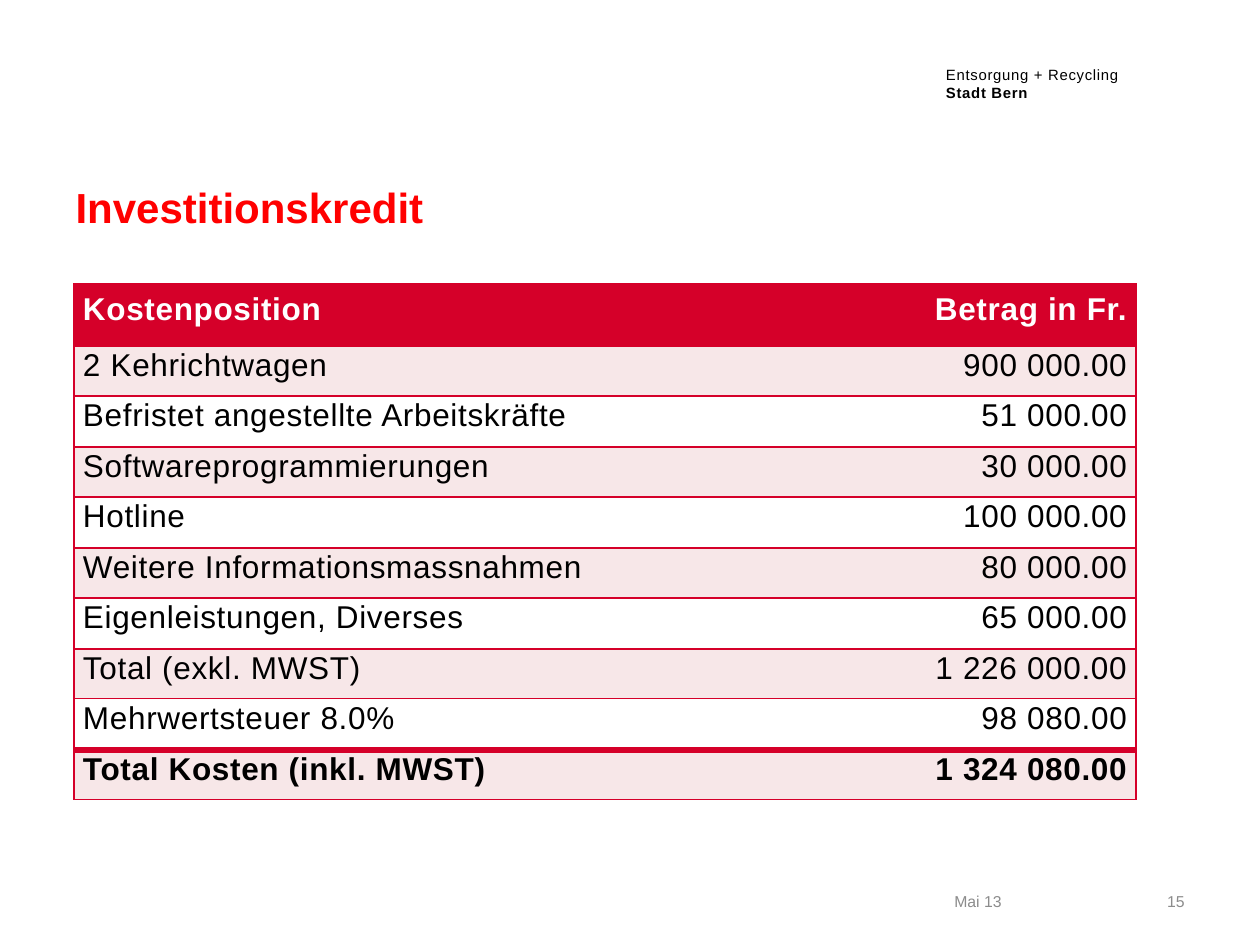
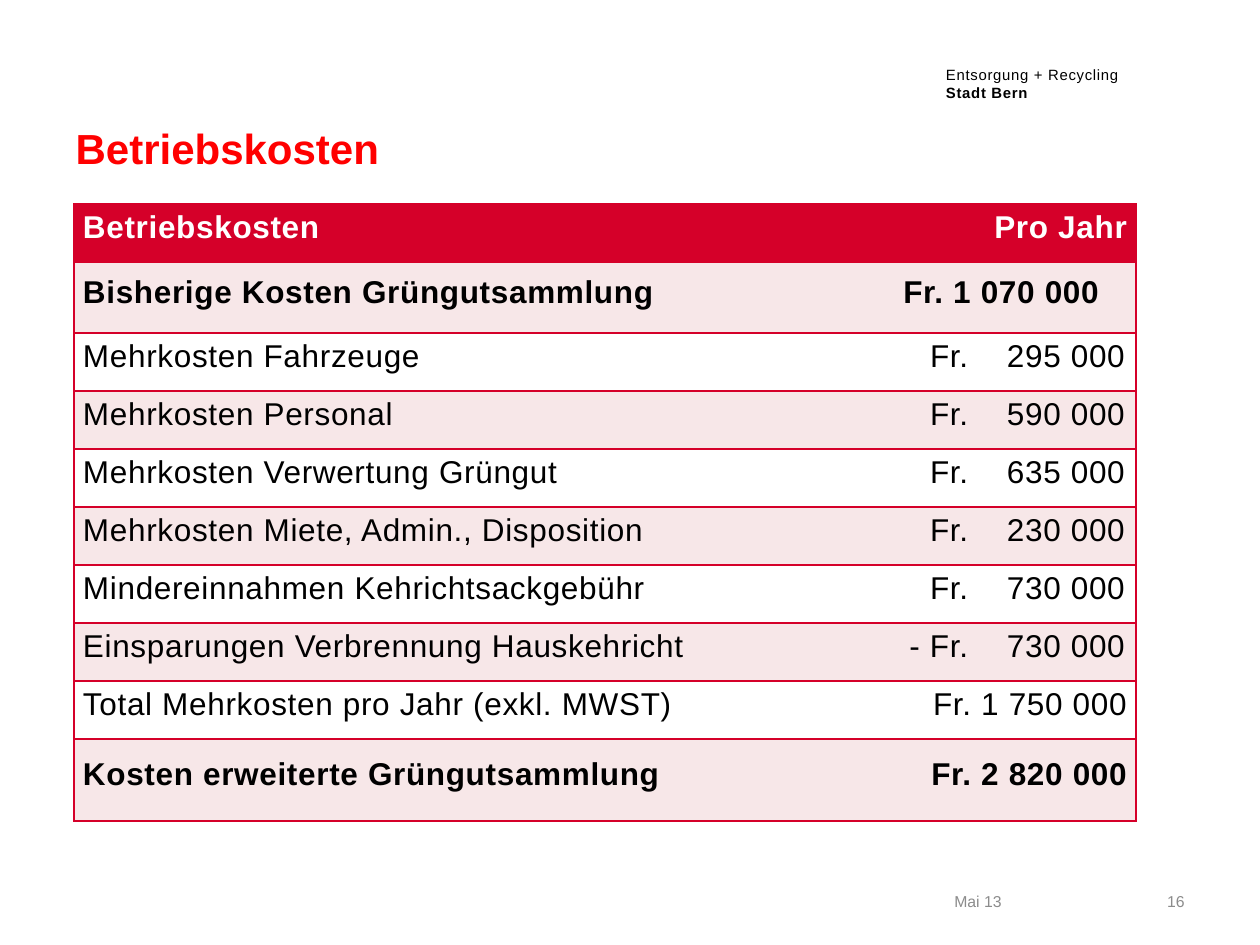
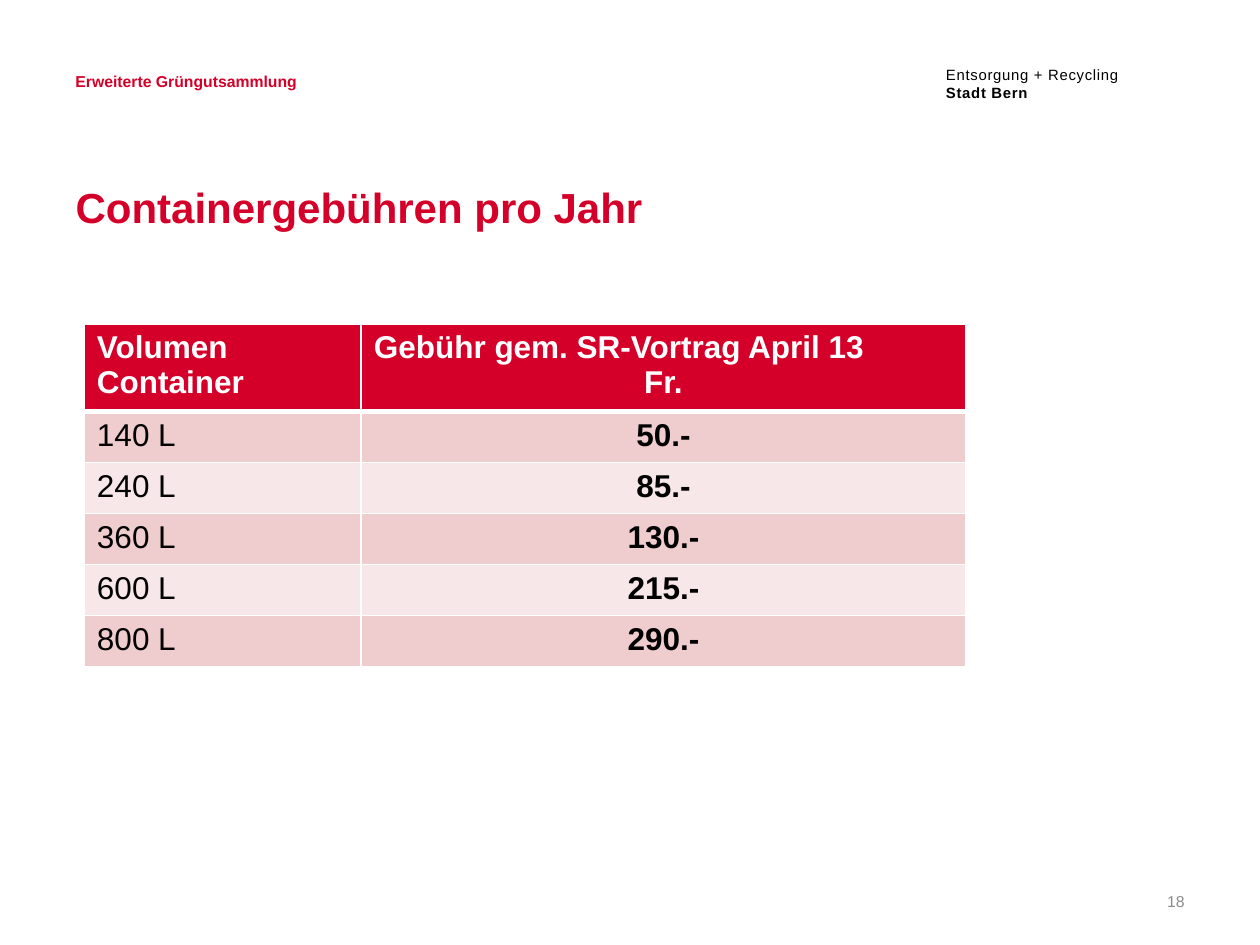
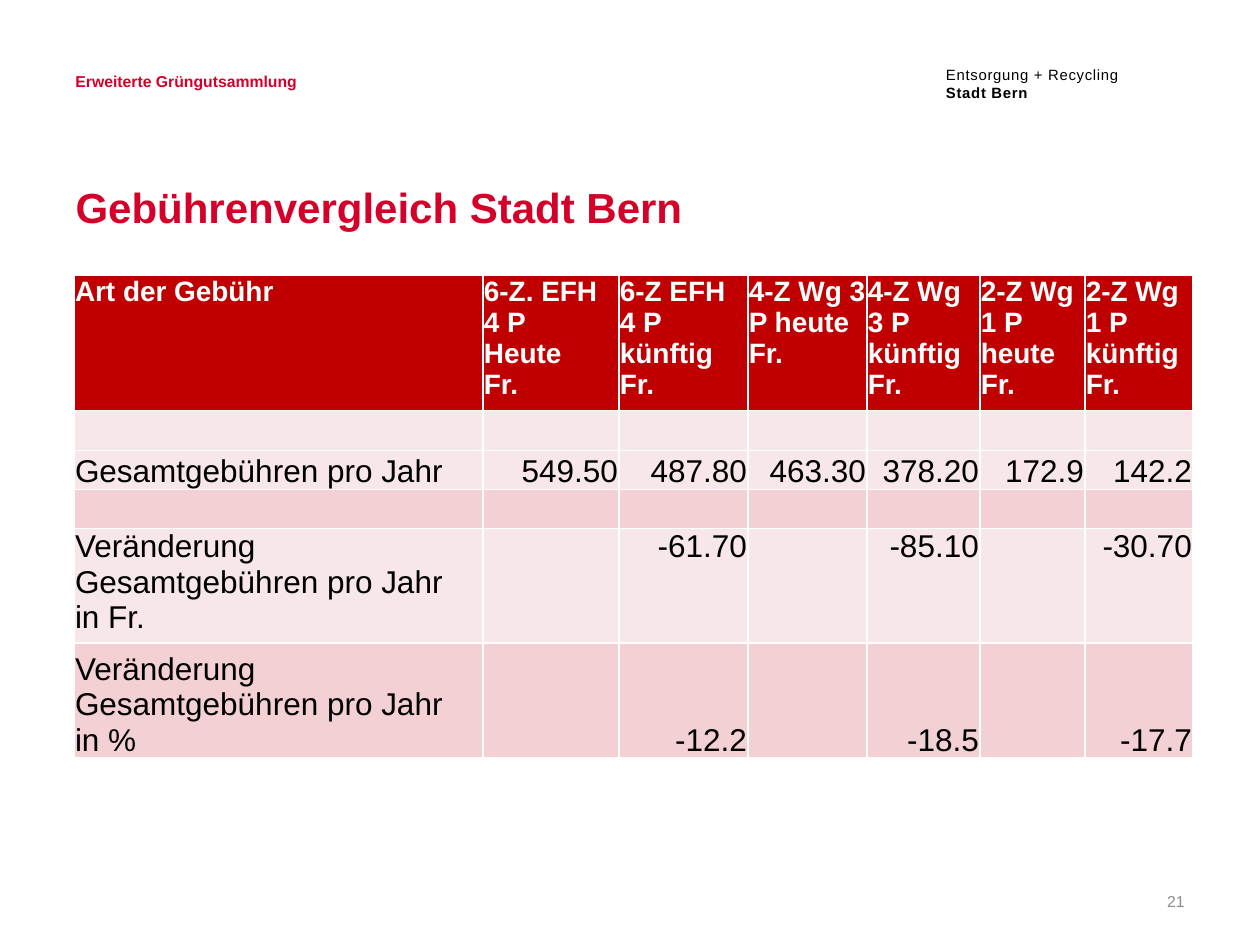
from itertools import cycle

from lxml.etree import SubElement
from pptx import Presentation
from pptx.dml.color import RGBColor
from pptx.enum.text import MSO_ANCHOR as Anchor, MSO_AUTO_SIZE as AutoSize, PP_ALIGN as Align
from pptx.oxml.ns import qn
from pptx.util import Pt

COLORS = {
    "black": "000000", "white": "FFFFFF", "gray": "8C8C8C", "red": "FF0000",
    "crimson": "D50029", "dark_red": "C00000",
    "blush": "F7E7E8", "rose": "EFCCCD", "pink": "F2D0D3",
}
FONT = "Arial"
PX = 914400 / 126
PAGE_SIZE = (1260, 945)
TABS = (250, 406)
HEADER = "Entsorgung + Recycling\nStadt Bern"
TAGLINE = "Erweiterte Grüngutsammlung"
DATE = "Mai 13"

LEDGER = {
    "bands": ["blush", "white"], "head": "crimson", "line": "crimson",
    "aligns": [Align.LEFT, Align.RIGHT], "anchors": [Anchor.MIDDLE],
    "insets": (9, 0, 9, 0), "spacing": 0.4, "line_height": 14, "inner_width": 0,
}
GRID = {"line": "white", "inner_width": 1, "bold_rows": {0}}

SLIDES = [
    {
        "title": "Investitionskredit", "title_color": "red", "title_top": 175,
        "number": "15", "date": True,
        "table": LEDGER | {
            "left": 74, "top": 284, "widths": [594, 468],
            "heights": [62] + [50, 51] * 4 + [50],
            "bold_rows": {0, 9}, "rules": {9: 4},
            "rows": [
                ("Kostenposition", "Betrag in Fr."),
                ("2 Kehrichtwagen", "900 000.00"),
                ("Befristet angestellte Arbeitskräfte", "51 000.00"),
                ("Softwareprogrammierungen", "30 000.00"),
                ("Hotline", "100 000.00"),
                ("Weitere Informationsmassnahmen", "80 000.00"),
                ("Eigenleistungen, Diverses", "65 000.00"),
                ("Total (exkl. MWST)", "1 226 000.00"),
                ("Mehrwertsteuer 8.0%", "98 080.00"),
                ("Total Kosten (inkl. MWST)", "1 324 080.00"),
            ],
        },
    },
    {
        "title": "Betriebskosten", "title_color": "red", "title_top": 116,
        "number": "16", "date": True,
        "table": LEDGER | {
            "left": 74, "top": 204, "widths": [636, 426],
            "heights": [58, 71] + [58] * 7 + [82],
            "bold_rows": {0, 1, 9}, "right_insets": {(1, 1): 37},
            "rows": [
                ("Betriebskosten", "Pro Jahr"),
                ("Bisherige Kosten Grüngutsammlung", "Fr. 1 070 000"),
                ("Mehrkosten Fahrzeuge", "\tFr.\t295 000"),
                ("Mehrkosten Personal", "\tFr.\t590 000"),
                ("Mehrkosten Verwertung Grüngut", "\tFr.\t635 000"),
                ("Mehrkosten Miete, Admin., Disposition", "\tFr.\t230 000"),
                ("Mindereinnahmen Kehrichtsackgebühr", "\tFr.\t730 000"),
                ("Einsparungen Verbrennung Hauskehricht", "\t- Fr.\t730 000"),
                ("Total Mehrkosten pro Jahr (exkl. MWST)", "Fr. 1 750 000"),
                ("Kosten erweiterte Grüngutsammlung", "Fr. 2 820 000"),
            ],
        },
    },
    {
        "title": "Containergebühren pro Jahr", "title_color": "crimson", "title_top": 175,
        "number": "18", "tagline": True,
        "table": GRID | {
            "left": 84, "top": 324, "widths": [277, 605], "heights": [83] + [51] * 5,
            "head": "crimson", "bands": ["rose", "blush"], "rules": {1: 3},
            "aligns": [Align.LEFT, Align.CENTER], "head_aligns": [Align.LEFT] * 2,
            "anchors": [Anchor.TOP], "insets": (13, 6, 13, 6), "bold_columns": {1},
            "rows": [
                ("Volumen Container", "Gebühr gem. SR-Vortrag April 13\nFr."),
                ("140 L", "50.-"),
                ("240 L", "85.-"),
                ("360 L", "130.-"),
                ("600 L", "215.-"),
                ("800 L", "290.-"),
            ],
            "centered_last_lines": {(0, 1)},
        },
    },
    {
        "title": "Gebührenvergleich Stadt Bern", "title_color": "crimson", "title_top": 175,
        "number": "21", "tagline": True,
        "table": GRID | {
            "left": 74, "top": 275, "widths": [409, 136, 129, 119, 113, 105, 108],
            "heights": [134, 40, 39, 39, 114, 115],
            "head": "dark_red", "bands": ["blush", "blush", "pink", "blush", "pink"],
            "aligns": [Align.LEFT] + [Align.RIGHT] * 6, "head_aligns": [Align.LEFT] * 7,
            "anchors": [Anchor.TOP, Anchor.TOP, Anchor.BOTTOM],
            "insets": (1, 1, 1, 0), "head_size": 16,
            "rows": [
                ("Art der Gebühr", "6-Z. EFH 4 P\nHeute\nFr.", "6-Z EFH 4 P künftig\nFr.",
                 "4-Z Wg 3 P heute\nFr.", "4-Z Wg 3 P künftig\nFr.",
                 "2-Z Wg 1 P heute\nFr.", "2-Z Wg 1 P künftig\nFr."),
                ("",) * 7,
                ("Gesamtgebühren pro Jahr", "549.50", "487.80", "463.30", "378.20", "172.9", "142.2"),
                ("",) * 7,
                ("Veränderung Gesamtgebühren pro Jahr\nin Fr.", "", "-61.70", "", "-85.10", "", "-30.70"),
                ("Veränderung Gesamtgebühren pro Jahr\nin %", "", "-12.2", "", "-18.5", "", "-17.7"),
            ],
        },
    },
]


def px(*lengths):
    return [round(length * PX) for length in lengths]


def rgb(name):
    return RGBColor.from_string(COLORS[name])


def add_tabs(para):
    tab_list = SubElement(para._p.get_or_add_pPr(), qn("a:tabLst"))
    for position in px(*TABS):
        SubElement(tab_list, qn("a:tab"), pos=str(position), algn="r")


def write(frame, text, size=18, color="black", bold=False, align=Align.LEFT,
          spacing=0, line_height=None):
    for index, line in enumerate(text.split("\n")):
        para = frame.add_paragraph() if index else frame.paragraphs[0]
        para.alignment = align
        if line_height:
            para.line_spacing = Pt(line_height)
        if "\t" in line:
            para.alignment = Align.LEFT
            add_tabs(para)
        if line:
            span = para.add_run()
            span.text = line
            span.font.name, span.font.size, span.font.bold = FONT, Pt(size), bold
            span.font.color.rgb = rgb(color)
            if spacing:
                span.font._element.set("spc", str(round(spacing * 100)))


def add_text(page, place, text, anchor=Anchor.TOP, **style):
    box = page.shapes.add_textbox(*px(*place))
    box.text_frame.word_wrap = True
    box.text_frame.vertical_anchor = anchor
    write(box.text_frame, text, **style)
    return box


def set_borders(cell, color, widths):
    for side, width in zip("LRTB", widths):
        line = SubElement(cell._tc.get_or_add_tcPr(), qn(f"a:ln{side}"), w=str(Pt(width)))
        if width:
            fill = SubElement(line, qn("a:solidFill"))
            SubElement(fill, qn("a:srgbClr"), val=COLORS[color])
        else:
            SubElement(line, qn("a:noFill"))


def add_table(page, design):
    rows, widths, heights = design["rows"], design["widths"], design["heights"]
    place = px(design["left"], design["top"], sum(widths), sum(heights))
    table = page.shapes.add_table(len(rows), len(widths), *place).table
    table.first_row = table.horz_banding = False
    for column, width in zip(table.columns, px(*widths)):
        column.width = width
    for row, height in zip(table.rows, px(*heights)):
        row.height = height

    rules = design.get("rules", {})
    bands, anchors = cycle(design["bands"]), cycle(design["anchors"])
    last = len(widths) - 1
    for r, texts in enumerate(rows):
        head = r == 0
        fill = design["head"] if head else next(bands)
        anchor = next(anchors)
        aligns = design.get("head_aligns", design["aligns"]) if head else design["aligns"]
        for c, text in enumerate(texts):
            cell = table.cell(r, c)
            left, top, right, bottom = design["insets"]
            right = design.get("right_insets", {}).get((r, c), right)
            cell.margin_left, cell.margin_top, cell.margin_right, cell.margin_bottom = px(
                left, top, right, bottom)
            cell.vertical_anchor = anchor
            inner = design["inner_width"]
            set_borders(cell, design["line"], (
                1 if c == 0 else inner, 1 if c == last else inner,
                rules.get(r, 1), rules.get(r + 1, 1)))
            cell.fill.solid()
            cell.fill.fore_color.rgb = rgb(fill)
            write(cell.text_frame, text, size=design.get("head_size", 18) if head else 18,
                  color="white" if head else "black",
                  bold=r in design["bold_rows"] or c in design.get("bold_columns", ()),
                  align=aligns[c], spacing=design.get("spacing", 0),
                  line_height=design.get("line_height"))
            if (r, c) in design.get("centered_last_lines", ()):
                cell.text_frame.paragraphs[-1].alignment = Align.CENTER


def add_layout_header(page, layout):
    header = add_text(page, (946, 66, 299, 80), HEADER, size=8.5, spacing=0.4)
    frame = header.text_frame
    frame.margin_left = frame.margin_top = frame.margin_right = frame.margin_bottom = 0
    frame.paragraphs[1].runs[0].font.bold = True
    header.element.nvSpPr.cNvPr.set("id", "20")
    layout.shapes.element.append(header.element)


def add_title(page, text, top, color):
    title = page.shapes.title
    title.left, title.top, title.width, title.height = px(63, top, 1133, 100)
    frame = title.text_frame
    frame.auto_size = AutoSize.NONE
    frame.vertical_anchor = Anchor.TOP
    write(frame, text, size=24, color=color, bold=True, line_height=29)


def main():
    deck = Presentation()
    deck.slide_width, deck.slide_height = px(*PAGE_SIZE)
    layout = deck.slide_layouts[5]
    footer = {"size": 9, "color": "gray", "anchor": Anchor.MIDDLE}
    for number, content in enumerate(SLIDES):
        page = deck.slides.add_slide(layout)
        if number == 0:
            add_layout_header(page, layout)
        add_title(page, content["title"], content["title_top"], content["title_color"])
        if content.get("date"):
            add_text(page, (878, 876, 200, 50), DATE, align=Align.CENTER, **footer)
        add_text(page, (1106, 876, 91, 50), content["number"], align=Align.RIGHT, **footer)
        if content.get("tagline"):
            add_text(page, (63, 66, 785, 50), TAGLINE, size=9, color="crimson", bold=True)
        add_table(page, content["table"])
    deck.save("out.pptx")


if __name__ == "__main__":
    main()
